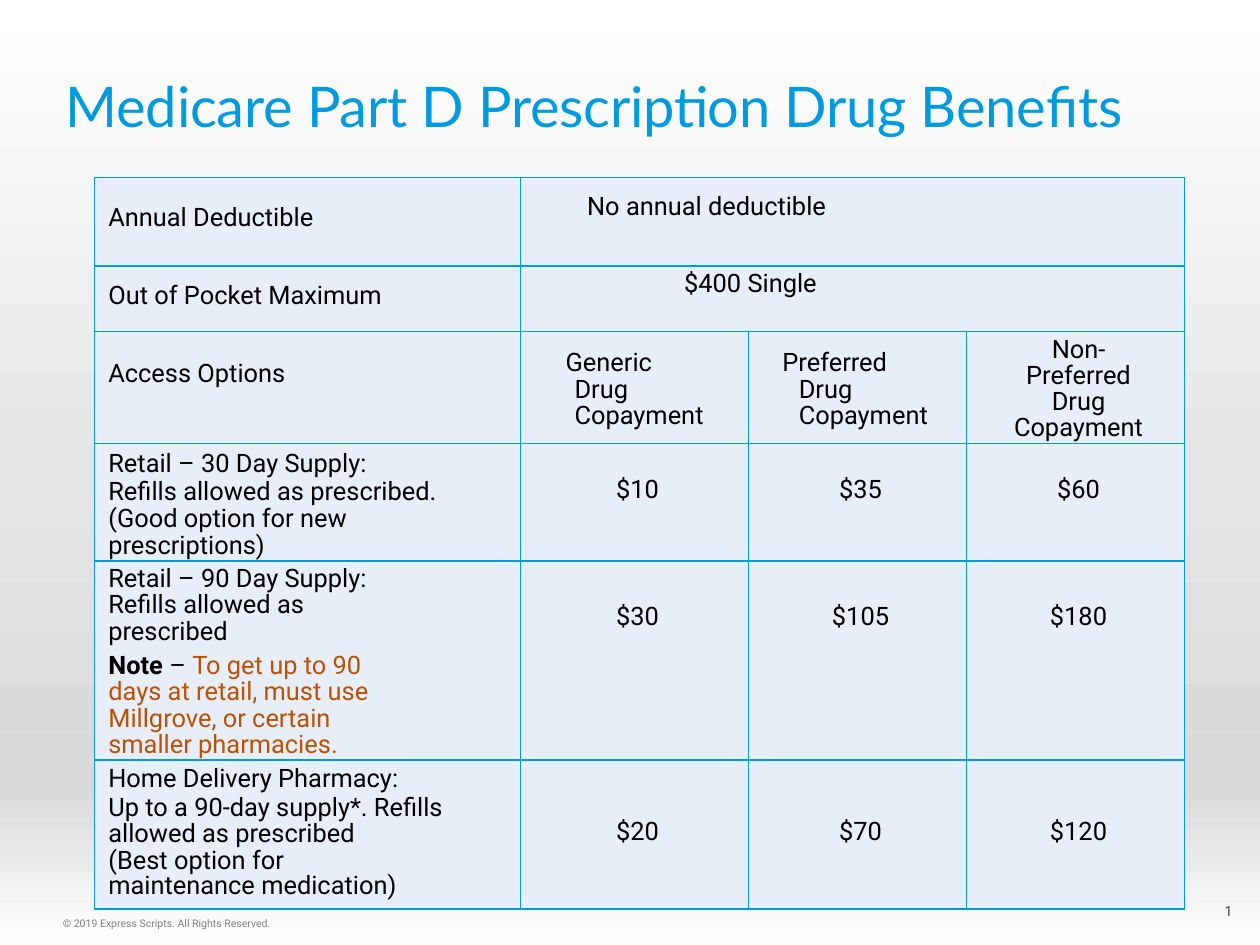
from dataclasses import dataclass
from lxml import etree
from pptx import Presentation
from pptx.dml.color import RGBColor
from pptx.enum.text import MSO_ANCHOR as Anchor, PP_ALIGN as Align
from pptx.oxml.ns import qn
from pptx.oxml.xmlchemy import OxmlElement as make_element
from pptx.util import Inches, Pt


@dataclass(frozen=True)
class Theme:
    title_font: str = "Lato"
    body_font: str = "Roboto"
    blue: str = "009BDF"
    cell: str = "E7EEF8"
    ink: str = "000000"
    note: str = "BA5104"
    number: str = "404040"
    footer: str = "808080"
    title_size: float = 32
    body_size: float = 14.5
    number_size: float = 8
    footer_size: float = 6
    backdrop: tuple = ((0, "FFFFFF"), (51, "E5E5E5"), (83, "D9D9D9"), (100, "FFFFFF"))


@dataclass
class Para:
    spans: tuple
    line: float = 0
    before: float = 0
    left: float = 0.11
    indent: float = 0
    align: Align = Align.LEFT


@dataclass
class Entry:
    paras: tuple
    top: float = 0.05
    right: float = 0


THEME = Theme()
BREAK = "\n"
COLUMNS = (3.38, 1.81, 1.73, 1.73)
ROWS = (0.7, 0.52, 0.89, 0.93, 1.58, 1.18)


def set_values(target, values):
    for name, value in values.items():
        setattr(target, name, value)


def style_font(font, name, size, color, bold=False):
    set_values(font, {"name": name, "size": Pt(size), "bold": bold})
    font.color.rgb = RGBColor.from_string(color)


def set_margins(target, left=0, top=0, right=0, bottom=0):
    set_values(target, {"margin_left": Inches(left), "margin_top": Inches(top),
                        "margin_right": Inches(right), "margin_bottom": Inches(bottom)})


def paint_background(page):
    fill = page.background.fill
    fill.gradient()
    fill.gradient_angle = 270
    stops = page.element.find(".//" + qn("a:gsLst"))
    for stop in list(stops):
        stops.remove(stop)
    for position, color in THEME.backdrop:
        stop = etree.SubElement(stops, qn("a:gs"), pos=str(position * 1000))
        etree.SubElement(stop, qn("a:srgbClr"), val=color)


def add_title(page, text):
    title = page.shapes.title
    set_values(title, {"left": Inches(0.52), "top": Inches(0.56),
                       "width": Inches(9.11), "height": Inches(0.55)})
    frame = title.text_frame
    set_margins(frame, top=0.01)
    frame.vertical_anchor = Anchor.TOP
    para = frame.paragraphs[0]
    para.alignment = Align.LEFT
    span = para.add_run()
    span.text = text
    style_font(span.font, THEME.title_font, THEME.title_size, THEME.blue)
    span.font._element.set("spc", "-10")


def add_box(page, left, top, width, height):
    box = page.shapes.add_textbox(*map(Inches, (left, top, width, height)))
    frame = box.text_frame
    frame.word_wrap = True
    set_margins(frame)
    return frame


def add_footer(page, text):
    span = add_box(page, 0.5, 7.28, 3.67, 0.15).paragraphs[0].add_run()
    span.text = text
    style_font(span.font, THEME.body_font, THEME.footer_size, THEME.footer)


def add_page_number(page, number):
    frame = add_box(page, 9.5, 7.02, 0.5, 0.42)
    frame.vertical_anchor = Anchor.MIDDLE
    para = frame.paragraphs[0]
    para.alignment = Align.CENTER
    span = para.add_run()
    span.text = number
    style_font(span.font, THEME.body_font, THEME.number_size, THEME.number)
    field = make_element("a:fld")
    field.set("id", "{B6F15528-21DE-4FAA-801E-634DDDAF4B2B}")
    field.set("type", "slidenum")
    run = span._r
    run.getparent().replace(run, field)
    field.extend(list(run))


def write_para(para, content):
    para.alignment = content.align
    properties = para._p.get_or_add_pPr()
    properties.set("marL", str(Inches(content.left)))
    properties.set("indent", str(Inches(content.indent)))
    if content.line:
        para.line_spacing = Pt(content.line) if content.line > 2 else content.line
    if content.before:
        para.space_before = Pt(content.before)
    for item in content.spans:
        if item == BREAK:
            para.add_line_break()
            continue
        text, color, bold = (item, THEME.ink, False) if isinstance(item, str) else item
        span = para.add_run()
        span.text = text
        style_font(span.font, THEME.body_font, THEME.body_size, color, bold)


def draw_borders(cell):
    properties = cell._tc.get_or_add_tcPr()
    for side in ("a:lnL", "a:lnR", "a:lnT", "a:lnB"):
        line = etree.SubElement(properties, qn(side), w=str(Pt(1)))
        fill = etree.SubElement(line, qn("a:solidFill"))
        etree.SubElement(fill, qn("a:srgbClr"), val=THEME.blue)


def fill_cell(cell, entry):
    set_margins(cell, top=entry.top, right=entry.right)
    cell.vertical_anchor = Anchor.TOP
    frame = cell.text_frame
    for index, content in enumerate(entry.paras):
        para = frame.add_paragraph() if index else frame.paragraphs[0]
        write_para(para, content)


def label(text, top):
    return Entry((Para((text,)),), top)


def fact(text, left, indent, top):
    return Entry((Para((text,), 15.2, left=left, indent=indent),), top)


def heading(kind, left, indent):
    return Entry((Para((kind, BREAK, "Drug Copayment"), 15.2, left=left, indent=indent),), 0.16)


def prices(top, *values):
    return [Entry((Para((value,), left=0.05, align=Align.CENTER),), top) for value in values]


def benefit_rows():
    non_preferred = Para(("Non-Preferred Drug Copayment",), 0.87, left=0.29, align=Align.CENTER)
    retail_30 = Entry((
        Para(("Retail – 30 Day Supply:",), 16.3),
        Para(("Refills allowed as prescribed. (Good option for new prescriptions)",), 15.2, 1.2),
    ), right=0.43)
    retail_90 = Entry((
        Para(("Retail – 90 Day Supply: Refills allowed as prescribed",), 15.2),
        Para((("Note ", THEME.ink, True), "– ",
              ("To get up to 90 days at retail, must use Millgrove, or certain "
               "smaller pharmacies.", THEME.note, False)), 15.2, 3.9),
    ), right=0.95)
    home = Entry((
        Para(("Home Delivery Pharmacy:",), 16.3),
        Para(("Up to a 90-day supply*. Refills allowed as prescribed",), 15.2, 1.2),
        Para(("(Best option for", BREAK, "maintenance medication)"), 14.4, 0.7),
    ), 0.04, 0.43)
    return [
        [label("Annual Deductible", 0.2), fact("No annual deductible", 0.4, 0.13, 0.14)],
        [label("Out of Pocket Maximum", 0.12), fact("$400 Single", 1.15, 0.15, 0.05)],
        [label("Access Options", 0.22), heading("Generic", 0.43, -0.07),
         heading("Preferred", 0.4, -0.13), Entry((non_preferred,), right=0.24)],
        [retail_30, *prices(0.25, "$10", "$35", "$60")],
        [retail_90, *prices(0.33, "$30", "$105", "$180")],
        [home, *prices(0.45, "$20", "$70", "$120")],
    ]


def add_benefits(page):
    size = (0.75, 1.41, sum(COLUMNS), sum(ROWS))
    table = page.shapes.add_table(len(ROWS), len(COLUMNS), *map(Inches, size)).table
    set_values(table, {"first_row": False, "horz_banding": False})
    for column, width in zip(table.columns, COLUMNS):
        column.width = Inches(width)
    for row, height in zip(table.rows, ROWS):
        row.height = Inches(height)
    for cell in table.iter_cells():
        draw_borders(cell)
        cell.fill.solid()
        cell.fill.fore_color.rgb = RGBColor.from_string(THEME.cell)
    for row, entries in enumerate(benefit_rows()):
        if len(entries) < len(COLUMNS):
            table.cell(row, 1).merge(table.cell(row, len(COLUMNS) - 1))
        for column, entry in enumerate(entries):
            fill_cell(table.cell(row, column), entry)


def main():
    deck = Presentation()
    set_values(deck, {"slide_width": Inches(10), "slide_height": Inches(7.5)})
    page = deck.slides.add_slide(deck.slide_layouts[5])
    paint_background(page)
    add_page_number(page, "2")
    add_footer(page, "© 2019 Express Scripts. All Rights Reserved.")
    add_title(page, "Medicare Part D Prescription Drug Benefits")
    add_benefits(page)
    deck.save("out.pptx")


if __name__ == "__main__":
    main()
